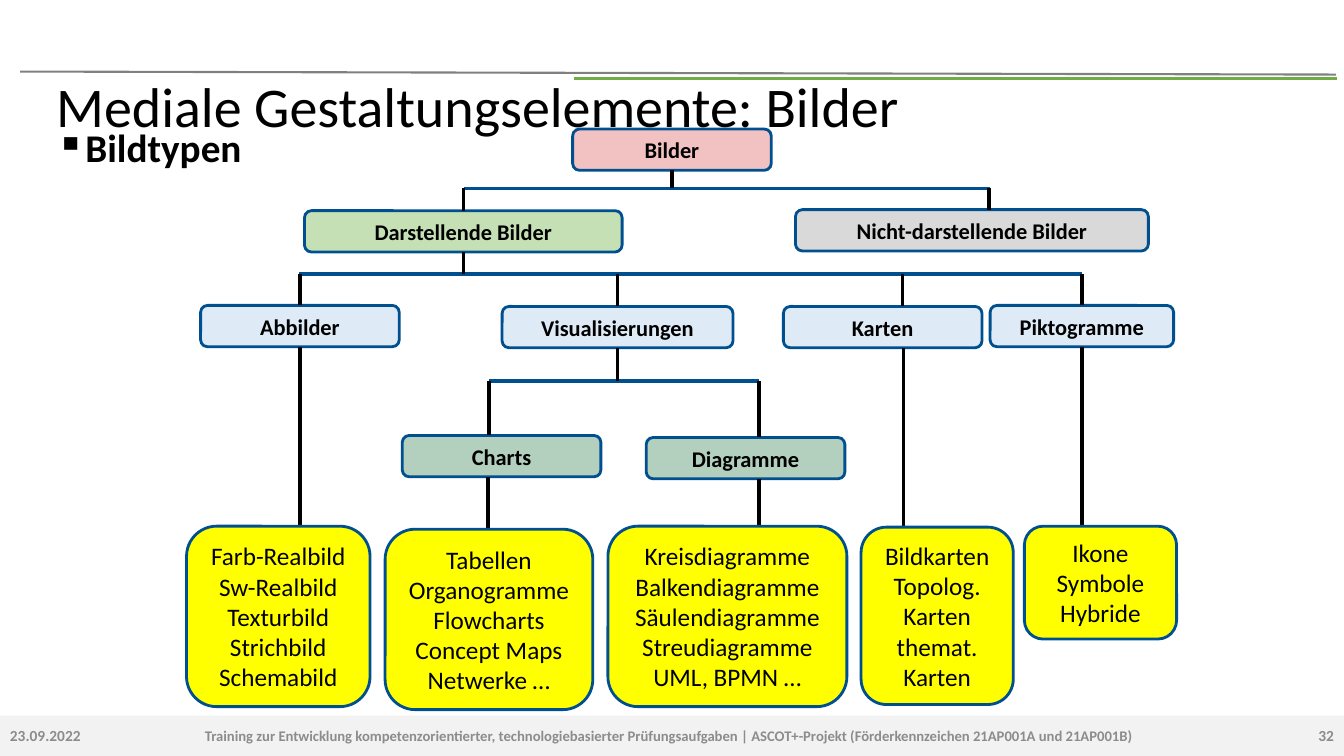
from pptx import Presentation
from pptx.dml.color import RGBColor
from pptx.enum.shapes import MSO_CONNECTOR, MSO_SHAPE
from pptx.enum.text import MSO_ANCHOR, PP_ALIGN
from pptx.oxml.ns import qn
from pptx.util import Inches, Pt
from lxml.etree import SubElement

BLUE = "004F8F"
NODE_HEIGHT = 0.41

# label: left, top, width, fill (relative to the tree)
NODES = {
    "Bilder": (3.83, 0, 1.97, "F2C1C1"),
    "Darstellende Bilder": (1.17, 0.81, 3.15, "C5E0B4"),
    "Nicht-darstellende Bilder": (6.04, 0.8, 3.5, "D9D9D9"),
    "Abbilder": (0.14, 1.75, 1.97, "DEEBF7"),
    "Visualisierungen": (3.13, 1.76, 2.29, "DEEBF7"),
    "Karten": (5.92, 1.76, 1.97, "DEEBF7"),
    "Piktogramme": (7.97, 1.75, 1.82, "DEEBF7"),
    "Charts": (2.14, 3.04, 1.97, "B3CFBE"),
    "Diagramme": (4.56, 3.06, 1.97, "B3CFBE"),
}
# left, top, width, height, examples
LEAVES = [
    (0, 3.94, 1.82, 1.79,
     ["Farb-Realbild", "Sw-Realbild", "Texturbild", "Strichbild", "Schemabild"]),
    (1.97, 3.97, 2.06, 1.79,
     ["Tabellen", "Organogramme", "Flowcharts", "Concept Maps", "Netwerke …"]),
    (4.18, 3.94, 2.37, 1.79,
     ["Kreisdiagramme", "Balkendiagramme", "Säulendiagramme Streudiagramme", "UML, BPMN …"]),
    (6.69, 3.95, 1.51, 1.76, ["Bildkarten", "Topolog. Karten", "themat. Karten"]),
    (8.31, 3.94, 1.51, 1.12, ["Ikone", "Symbole", "Hybride"]),
]
# left, right, height of each horizontal bar
BARS = [(2.75, 7.97, 0.59), (1.12, 8.88, 1.44), (3, 5.68, 2.5)]
# node, x, height of the far end
STEMS = [
    ("Bilder", 4.82, 0.59),
    ("Darstellende Bilder", 2.76, 0.59),
    ("Nicht-darstellende Bilder", 7.96, 0.59),
    ("Darstellende Bilder", 2.75, 1.44),
    ("Abbilder", 1.12, 1.44),
    ("Visualisierungen", 4.32, 1.44),
    ("Karten", 7.1, 1.44),
    ("Piktogramme", 8.88, 1.44),
    ("Visualisierungen", 4.32, 2.5),
    ("Charts", 3, 2.5),
    ("Diagramme", 5.68, 2.5),
    ("Abbilder", 1.12, 3.94),
    ("Charts", 2.99, 3.97),
    ("Diagramme", 5.68, 3.94),
    ("Karten", 7.11, 3.95),
    ("Piktogramme", 8.88, 3.94),
]


def rgb(value):
    return RGBColor.from_string(value)


def style(paragraph, size, color="000000", bold=False, align=PP_ALIGN.LEFT):
    paragraph.alignment = align
    font = paragraph.font
    font.name, font.size, font.bold = "Calibri", Pt(size), bold
    font.color.rgb = rgb(color)


def add_label(slide, box, text, anchor=MSO_ANCHOR.MIDDLE):
    frame = slide.shapes.add_textbox(*map(Inches, box)).text_frame
    frame.word_wrap = True
    frame.vertical_anchor = anchor
    frame.text = text
    return frame.paragraphs[0]


def add_line(slide, x1, y1, x2, y2, color, width):
    line = slide.shapes.add_connector(
        MSO_CONNECTOR.STRAIGHT, *map(Inches, (x1, y1, x2, y2)))
    line.line.color.rgb = rgb(color)
    line.line.width = Pt(width)
    SubElement(line._element.spPr, qn("a:effectLst"))
    return line


def add_rounded(slide, box, fill, rows, size, bold):
    shape = slide.shapes.add_shape(MSO_SHAPE.ROUNDED_RECTANGLE, *map(Inches, box))
    shape.shadow.inherit = False
    shape.fill.solid()
    shape.fill.fore_color.rgb = rgb(fill)
    shape.line.color.rgb = rgb(BLUE)
    shape.line.width = Pt(2)
    frame = shape.text_frame
    frame.word_wrap = True
    frame.vertical_anchor = MSO_ANCHOR.MIDDLE
    frame.margin_left = frame.margin_right = Inches(0.05)
    frame.margin_top = frame.margin_bottom = Inches(0.05)
    frame.text = "\n".join(rows)
    for paragraph in frame.paragraphs:
        style(paragraph, size, bold=bold, align=PP_ALIGN.CENTER)
    return shape


def add_header(slide, left, top, width):
    # Rules above the title
    add_line(slide, left - 0.26, top - 0.08, left + 12.79, top - 0.05, "808080", 1.5)
    add_line(slide, left + 5.23, top - 0.01, left + 12.8, top - 0.01, "70AD47", 2.25)
    # Title
    title = add_label(slide, (left, top, width, 0.59), "Mediale Gestaltungselemente: Bilder")
    title.line_spacing = 0.9
    style(title, 40)
    # Bulleted subtitle
    subtitle = add_label(slide, (left, top + 0.44, 5, 0.55), "Bildtypen", MSO_ANCHOR.TOP)
    subtitle.line_spacing = 0.9
    properties = subtitle._p.get_or_add_pPr()
    properties.set("marL", str(Inches(0.25)))
    properties.set("indent", str(-Inches(0.25)))
    SubElement(properties, qn("a:buChar")).set("char", "▪")
    style(subtitle, 28, bold=True)


def add_tree(slide, left, top):
    # Categories
    nodes = {
        label: add_rounded(slide, (left + x, top + y, width, NODE_HEIGHT),
                           fill, [label], 16, True)
        for label, (x, y, width, fill) in NODES.items()
    }
    # Bars and stems, joined where a stem meets the middle of a side
    for start, end, y in BARS:
        add_line(slide, left + start, top + y, left + end, top + y, BLUE, 2.5)
    for label, x, far_y in STEMS:
        node_x, node_y, width, _ = NODES[label]
        below = far_y > node_y
        near_y = node_y + NODE_HEIGHT if below else node_y
        middle = node_x + width / 2
        centred = abs(x - middle) < 0.06
        if centred:
            x = middle
        stem = add_line(slide, left + x, top + near_y, left + x, top + far_y, "000000", 2.5)
        if centred:
            stem.begin_connect(nodes[label], 2 if below else 0)
    # Examples
    for x, y, width, height, examples in LEAVES:
        add_rounded(slide, (left + x, top + y, width, height), "FFFF00", examples, 18, False)


def add_footer(slide, left, top, width, height):
    band = slide.shapes.add_shape(
        MSO_SHAPE.RECTANGLE, *map(Inches, (left, top, width, height)))
    band.shadow.inherit = False
    band.fill.solid()
    band.fill.fore_color.rgb = rgb("F2F2F2")
    band.line.fill.background()
    project = ("Training zur Entwicklung kompetenzorientierter, technologiebasierter "
               "Prüfungsaufgaben | ASCOT+-Projekt "
               "(Förderkennzeichen 21AP001A und 21AP001B)")
    for x, part_width, text, size, align in [
        (0, 1.7, "23.09.2022", 11, PP_ALIGN.LEFT),
        (1.7, 9.87, project, 10.5, PP_ALIGN.CENTER),
        (width - 1.64, 1.64, "32", 11, PP_ALIGN.RIGHT),
    ]:
        label = add_label(slide, (left + x, top, part_width, height), text)
        style(label, size, "8C8C8C", True, align)


def main():
    presentation = Presentation()
    presentation.slide_width = Inches(13.33)
    presentation.slide_height = Inches(7.5)
    slide = presentation.slides.add_slide(presentation.slide_layouts[6])
    add_footer(slide, 0, 7.1, 13.33, 0.4)
    add_header(slide, 0.46, 0.79, 12.2)
    add_tree(slide, 1.85, 1.28)
    presentation.save("out.pptx")


if __name__ == "__main__":
    main()
